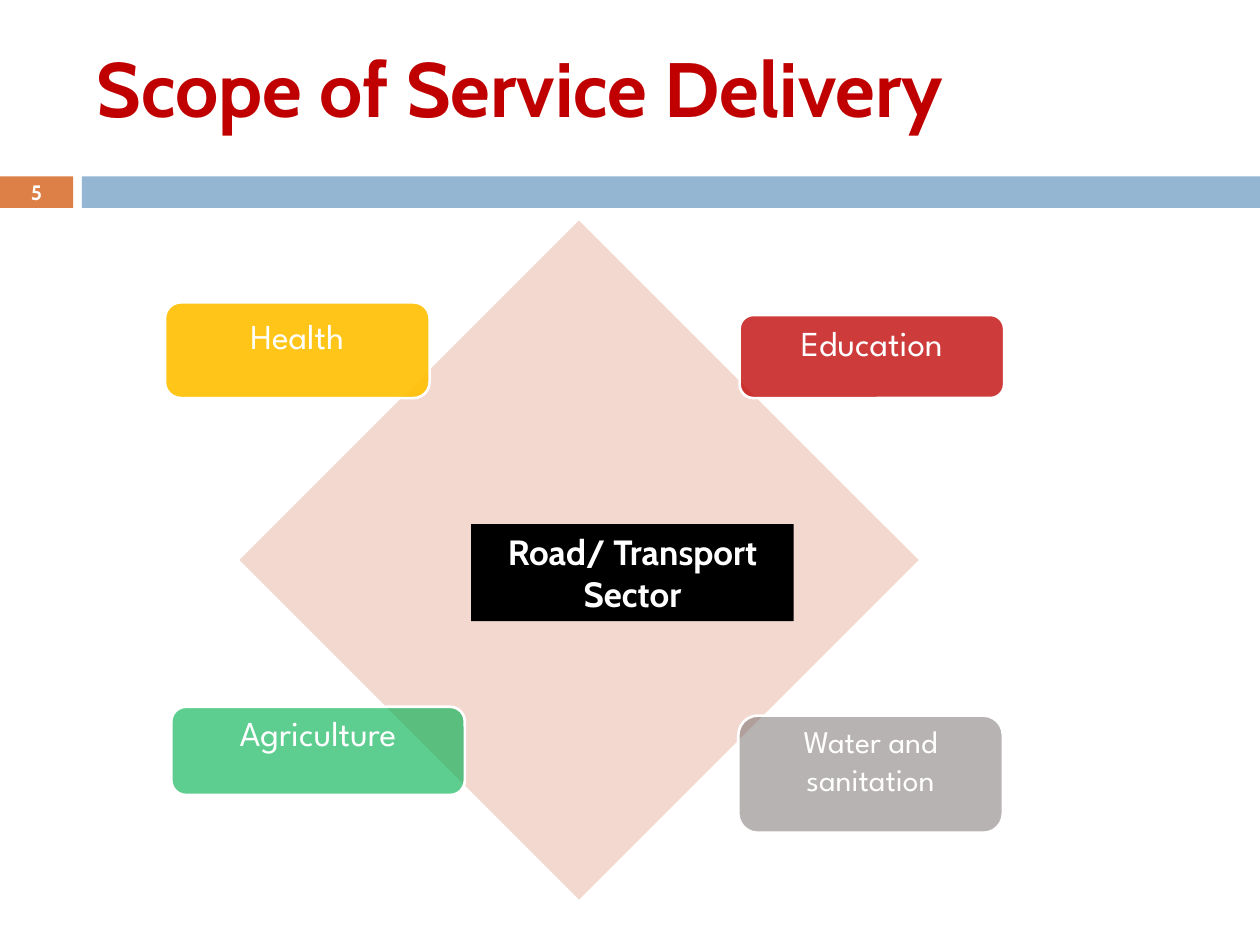
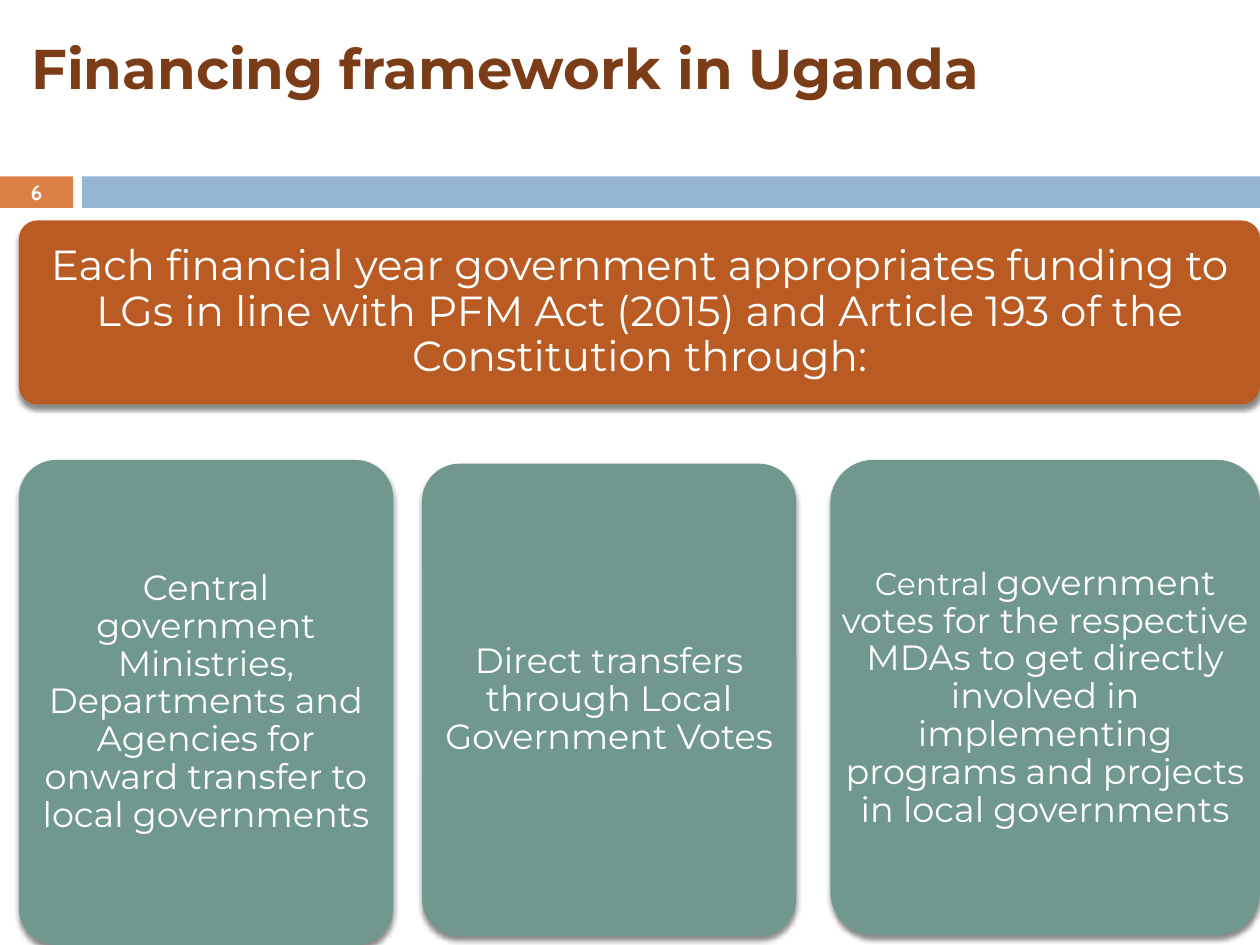
from lxml import etree
from pptx import Presentation
from pptx.dml.color import RGBColor
from pptx.enum.shapes import MSO_SHAPE
from pptx.enum.text import MSO_ANCHOR, PP_ALIGN
from pptx.oxml.ns import qn
from pptx.util import Inches, Pt

RECT, ROUND, DIAMOND = MSO_SHAPE.RECTANGLE, MSO_SHAPE.ROUNDED_RECTANGLE, MSO_SHAPE.DIAMOND
MIDDLE = MSO_ANCHOR.MIDDLE
LEFT, CENTER = PP_ALIGN.LEFT, PP_ALIGN.CENTER

# Shared style
W, H = 10, 7.5
WHITE, ORANGE, BLUE, PINK, BLACK = "FFFFFF", "DD8047", "94B6D2", "F2D8CF", "000000"
RUST, SAGE = "B95B22", "70988E"
CABIN, SPARTAN, MONTSERRAT = "Cabin", "League Spartan", "Montserrat"
BAND_TOP, BAND_H, NUMBER_W, BAND_LEFT = 1.4, 0.25, 0.58, 0.65
BODY_TOP = 1.75
MARGIN = 0.15

# Slide content: boxes are left, top, width, height in inches
SCOPE = dict(number=5, title="Scope of Service Delivery", box=(0.67, 0.25, 8.92, 0.87),
             size=44, font=CABIN, color="C00000")
DIAMOND_BOX = (1.9, BODY_TOP, 5.39, 5.39)
CENTRE_LABEL = ("Road/ Transport Sector", (3.74, 4.16, 2.56, 0.77))
# text, box, colour, opacity %, size, lift (bottom inset that raises the text)
SECTORS = [
    ("Health", (1.31, 2.4, 2.1, 0.76), "FFC000", 90, 20, 0.23),
    ("Education", (5.87, 2.5, 2.1, 0.66), "C00000", 77, 20, 0.23),
    ("Agriculture", (1.36, 5.61, 2.33, 0.7), "00B050", 63, 20, 0.3),
    ("Water and sanitation", (5.86, 5.68, 2.1, 0.93), "726868", 50, 18, 0.23),
]

FINANCING = dict(number=6, title="Financing framework in Uganda",
                 box=(MARGIN, 0, W - MARGIN, 1.07),
                 size=32, font=MONTSERRAT, color="7B3D17")
# runs as (text, size), box, colour, inset
FUNDING = [
    ([("Each financial year government appropriates funding to LGs in line with "
       "PFM Act (2015) and Article 193 of the Constitution through:", 24)],
     (MARGIN, BODY_TOP, W - MARGIN, 1.46), RUST, 0.1),
    ([("Central government Ministries, Departments and Agencies for onward "
       "transfer to local governments", 20)],
     (MARGIN, 3.65, 2.97, 3.85), SAGE, 0.08),
    ([("Direct transfers through Local Government Votes", 20)],
     (3.35, 3.68, 2.97, 3.75), SAGE, 0.08),
    ([("Central ", 18),
      ("government votes for the respective MDAs to get directly involved in "
       "implementing programs and projects in local governments", 20)],
     (6.59, 3.65, 3.41, 3.77), SAGE, 0.07),
]


def rgb(value):
    return RGBColor.from_string(value)


def add_box(slide, kind, box, fill, opacity=100, line=None):
    sp = slide.shapes.add_shape(kind, *map(Inches, box))
    sp.shadow.inherit = False
    sp.fill.solid()
    sp.fill.fore_color.rgb = rgb(fill)
    if opacity < 100:
        color = sp.fill._xPr.find(qn("a:solidFill"))[0]
        etree.SubElement(color, qn("a:alpha"), val=str(opacity * 1000))
    if line:
        sp.line.color.rgb = rgb(line)
        sp.line.width = Pt(1.5)
    else:
        sp.line.fill.background()
    return sp


def add_shadow(sp):
    effects = sp._element.spPr.find(qn("a:effectLst"))
    shadow = etree.SubElement(effects, qn("a:outerShdw"), blurRad=str(Pt(3)),
                              dist=str(Pt(2.4)), dir="5400000", rotWithShape="0")
    color = etree.SubElement(shadow, qn("a:srgbClr"), val=BLACK)
    etree.SubElement(color, qn("a:alpha"), val="45000")


def add_text(slide, box, runs, font, color=WHITE, bold=False, align=CENTER,
             insets=(0.1, 0.05, 0.1, 0.05), spacing=None):
    tf = slide.shapes.add_textbox(*map(Inches, box)).text_frame
    tf.word_wrap = True
    tf.vertical_anchor = MIDDLE
    tf.margin_left, tf.margin_top, tf.margin_right, tf.margin_bottom = map(Inches, insets)
    p = tf.paragraphs[0]
    p.alignment = align
    p.line_spacing = spacing
    p.font.name, p.font.bold = font, bold
    p.font.color.rgb = rgb(color)
    for text, size in runs:
        r = p.add_run()
        r.text = text
        r.font.size = Pt(size)


def add_slide(prs, number, title, box, size, font, color):
    """Blank slide with the band, its number and the title."""
    slide = prs.slides.add_slide(prs.slide_layouts[6])
    number_box = (0, BAND_TOP, NUMBER_W, BAND_H)
    add_box(slide, RECT, number_box, ORANGE)
    add_box(slide, RECT, (BAND_LEFT, BAND_TOP, W - BAND_LEFT, BAND_H), BLUE)
    add_text(slide, box, [(title, size)], font, color, bold=True, align=LEFT)
    add_text(slide, number_box, [(str(number), 11.9)], CABIN, bold=True)
    return slide


def build_scope(prs):
    slide = add_slide(prs, **SCOPE)
    add_box(slide, DIAMOND, DIAMOND_BOX, PINK)
    for text, box, fill, opacity, size, lift in SECTORS:
        add_box(slide, ROUND, box, fill, opacity, line=WHITE)
        add_text(slide, box, [(text, size)], SPARTAN, insets=(0.08, 0, 0.08, lift))
    text, box = CENTRE_LABEL
    add_box(slide, RECT, box, BLACK)
    add_text(slide, box, [(text, 20)], CABIN, bold=True)


def build_financing(prs):
    slide = add_slide(prs, **FINANCING)
    for runs, box, fill, inset in FUNDING:
        sp = add_box(slide, ROUND, box, fill)
        sp.adjustments[0] = 0.1
        add_shadow(sp)
        add_text(slide, box, runs, MONTSERRAT, insets=(inset,) * 4, spacing=0.9)


def main():
    prs = Presentation()
    prs.slide_width, prs.slide_height = Inches(W), Inches(H)
    build_scope(prs)
    build_financing(prs)
    prs.save("out.pptx")


if __name__ == "__main__":
    main()
